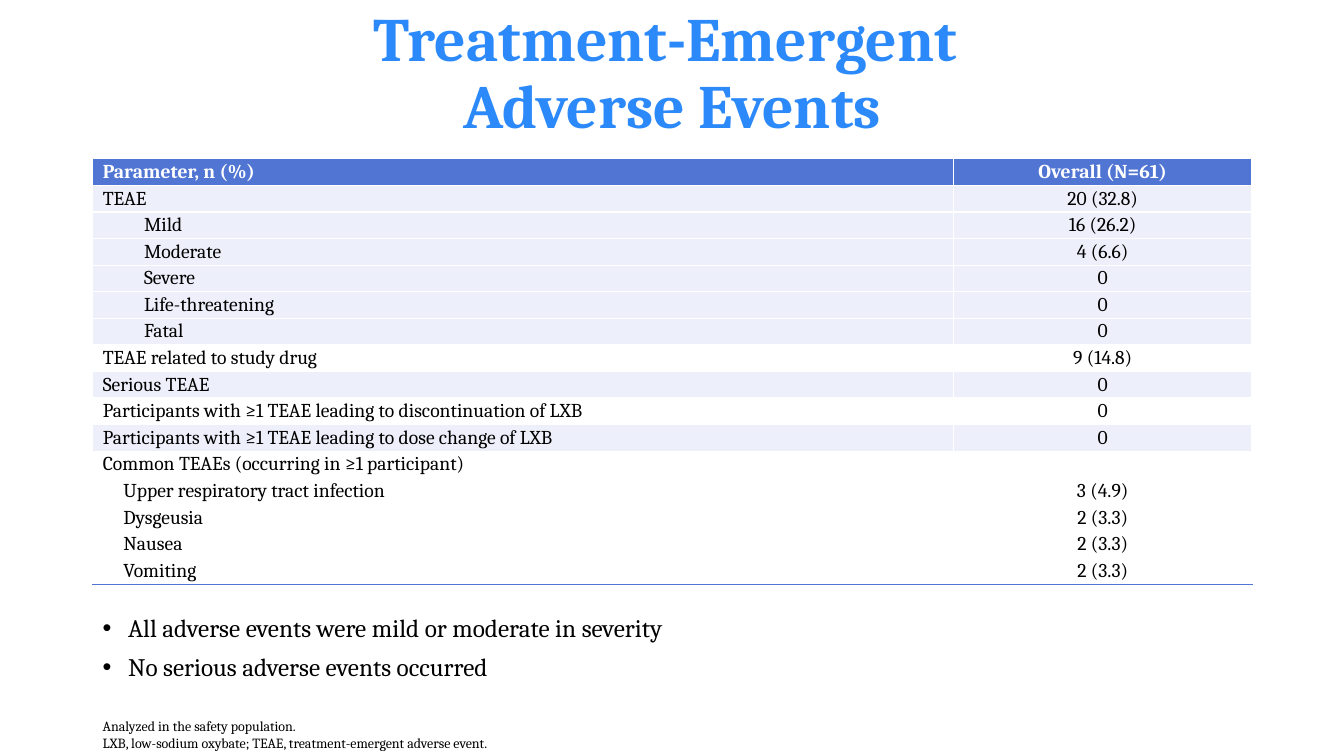
from dataclasses import dataclass

from lxml import etree
from pptx import Presentation
from pptx import util as u
from pptx.dml.color import RGBColor
from pptx.enum import text
from pptx.oxml import ns


@dataclass(frozen=True)
class Theme:
    font: str = "Cambria"
    title_color: str = "2B89F9"
    accent: str = "5075D3"
    ink: str = "000000"
    white: str = "FFFFFF"
    title_size: int = 44
    bullet_size: int = 18
    table_size: int = 14
    note_size: int = 10
    band_opacity: int = 10


THEME = Theme()
LEFT, WIDTH = u.Cm(2.34), u.Cm(29.21)
ROW_HEIGHT = u.Cm(0.67)
COLUMN_WIDTHS = (u.Cm(21.69), u.Cm(7.52))
INDENT_STEP = u.Cm(0.52)
PLAIN_TABLE_STYLE = "{2D5ABB26-0587-4C30-8999-92F81FD0307C}"

HEADER = ("Parameter, n (%)", "Overall (N=61)")
# Label, value, indent level, shaded
EVENTS = [
    ("TEAE", "20 (32.8)", 0, True),
    ("Mild", "16 (26.2)", 2, True),
    ("Moderate", "4 (6.6)", 2, True),
    ("Severe", "0", 2, True),
    ("Life-threatening", "0", 2, True),
    ("Fatal", "0", 2, True),
    ("TEAE related to study drug", "9 (14.8)", 0, False),
    ("Serious TEAE", "0", 0, True),
    ("Participants with ≥1 TEAE leading to discontinuation of LXB", "0", 0, False),
    ("Participants with ≥1 TEAE leading to dose change of LXB", "0", 0, True),
    ("Common TEAEs (occurring in ≥1 participant)", "", 0, False),
    ("Upper respiratory tract infection", "3 (4.9)", 1, False),
    ("Dysgeusia", "2 (3.3)", 1, False),
    ("Nausea", "2 (3.3)", 1, False),
    ("Vomiting", "2 (3.3)", 1, False),
]
FINDINGS = [
    "All adverse events were mild or moderate in severity",
    "No serious adverse events occurred",
]
NOTES = [
    "Analyzed in the safety population.",
    "LXB, low-sodium oxybate; TEAE, treatment-emergent adverse event.",
]


def add_element(parent, tag, **attributes):
    return etree.SubElement(parent, ns.qn(tag), attributes)


def style_font(para, size, color, bold=False):
    para.font.name = THEME.font
    para.font.size = u.Pt(size)
    para.font.bold = bold
    para.font.color.rgb = RGBColor.from_string(color)


def set_indent(para, margin, first_line=0):
    properties = para._p.get_or_add_pPr()
    properties.set("marL", str(int(margin)))
    properties.set("indent", str(int(first_line)))
    return properties


def add_title(page, wording):
    title = page.shapes.title
    title.left, title.top = LEFT, u.Cm(0.05)
    title.width, title.height = WIDTH, u.Cm(3.68)
    frame = title.text_frame
    frame.text = wording
    frame.word_wrap = True
    frame.auto_size = text.MSO_AUTO_SIZE.NONE
    frame.vertical_anchor = text.MSO_ANCHOR.MIDDLE
    para = frame.paragraphs[0]
    para.alignment = text.PP_ALIGN.CENTER
    para.line_spacing = 0.9
    style_font(para, THEME.title_size, THEME.title_color, bold=True)


def add_border(cell, side, color, points):
    line = add_element(cell._tc.get_or_add_tcPr(), f"a:ln{side}", w=str(u.Pt(points)))
    add_element(add_element(line, "a:solidFill"), "a:srgbClr", val=color)


def fill_cell(cell, color, opacity=100):
    cell.fill.solid()
    cell.fill.fore_color.rgb = RGBColor.from_string(color)
    if opacity < 100:
        tint = cell._tc.tcPr.find(f".//{ns.qn('a:solidFill')}[last()]")
        tint = cell._tc.tcPr.find(ns.qn("a:solidFill"))[0]
        add_element(tint, "a:alpha", val=str(opacity * 1000))


def write_cell(cell, wording, color, centered, bold=False, level=0):
    cell.margin_left = cell.margin_right = u.Cm(0.25)
    cell.margin_top = cell.margin_bottom = u.Cm(0.05)
    cell.vertical_anchor = text.MSO_ANCHOR.MIDDLE
    cell.text = wording
    para = cell.text_frame.paragraphs[0]
    if centered:
        para.alignment = text.PP_ALIGN.CENTER
    if level:
        set_indent(para, level * INDENT_STEP)
    style_font(para, THEME.table_size, color, bold)


def add_event_table(page):
    rows = [(*HEADER, 0, True), *EVENTS]
    frame = page.shapes.add_table(
        len(rows), len(HEADER), LEFT, u.Cm(4), WIDTH, ROW_HEIGHT * len(rows))
    table = frame.table
    table.horz_banding = False
    table._tbl.tblPr.find(ns.qn("a:tableStyleId")).text = PLAIN_TABLE_STYLE
    for column, width in zip(table.columns, COLUMN_WIDTHS):
        column.width = width
    for index, (label, value, level, shaded) in enumerate(rows):
        header, last = index == 0, index == len(rows) - 1
        table.rows[index].height = ROW_HEIGHT
        for column, wording in enumerate((label, value)):
            cell = table.cell(index, column)
            write_cell(cell, wording, THEME.white if header else THEME.ink,
                       centered=column == 1, bold=header,
                       level=0 if column else level)
            for side in "LRT":
                add_border(cell, side, THEME.white, 1)
            add_border(cell, "B", *((THEME.accent, 0.5) if last else (THEME.white, 1)))
            if shaded:
                fill_cell(cell, THEME.accent, 100 if header else THEME.band_opacity)
            else:
                cell.fill.background()


def add_text(page, lines, top, height, size, bulleted=False):
    box = page.shapes.add_textbox(LEFT, top, WIDTH, height)
    frame = box.text_frame
    frame.word_wrap = True
    frame.auto_size = text.MSO_AUTO_SIZE.SHAPE_TO_FIT_TEXT
    frame.vertical_anchor = text.MSO_ANCHOR.BOTTOM
    for index, line in enumerate(lines):
        para = frame.add_paragraph() if index else frame.paragraphs[0]
        para.text = line
        if bulleted:
            if index:
                para.space_before = u.Pt(6)
            properties = set_indent(para, u.Cm(0.64), -u.Cm(0.64))
            add_element(properties, "a:buFont", typeface="Arial")
            add_element(properties, "a:buChar", char="•")
        style_font(para, size, THEME.ink)


def main():
    deck = Presentation()
    deck.slide_width, deck.slide_height = u.Cm(33.87), u.Cm(19.05)
    page = deck.slides.add_slide(deck.slide_layouts.get_by_name("Title Only"))
    add_title(page, "Treatment-Emergent \vAdverse Events")
    add_event_table(page)
    add_text(page, FINDINGS, u.Cm(15.29), u.Cm(2.01), THEME.bullet_size, bulleted=True)
    add_text(page, NOTES, u.Cm(17.93), u.Cm(1.12), THEME.note_size)
    deck.save("out.pptx")


if __name__ == "__main__":
    main()
